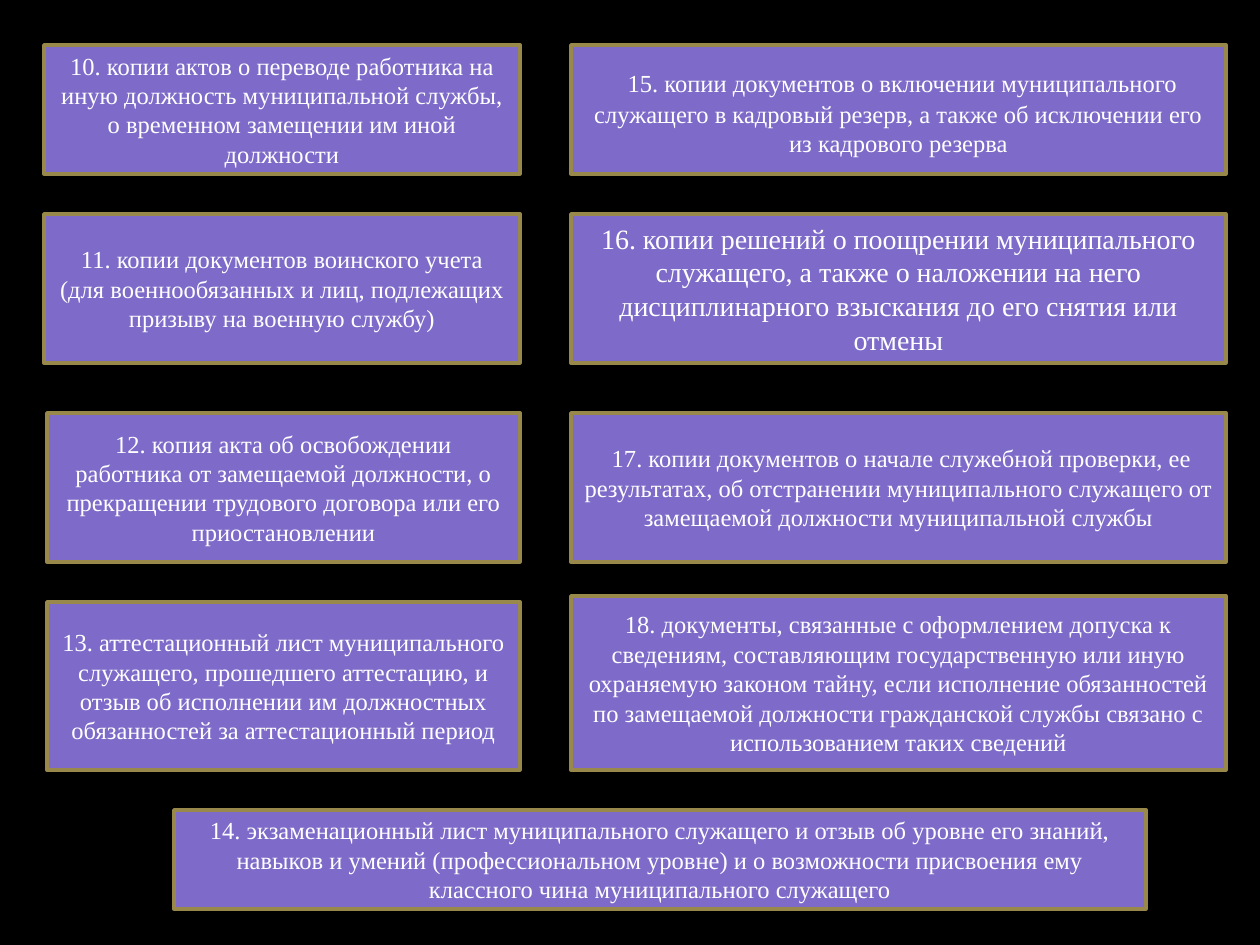
"""Build a slide of nine boxes listing documents kept in a municipal employee's personal file."""
from pptx import Presentation
from pptx.dml.color import RGBColor
from pptx.enum.shapes import MSO_SHAPE
from pptx.enum.text import MSO_ANCHOR, PP_ALIGN
from pptx.util import Pt

RECT = MSO_SHAPE.RECTANGLE
MIDDLE = MSO_ANCHOR.MIDDLE
CENTER = PP_ALIGN.CENTER

PX = 914400 // 126
WIDTH, HEIGHT = 1260, 945
FONT = "Times New Roman"
TEXT_SIZE = 14
COLORS = {"background": "000000", "box": "7E6BC9", "border": "98894B", "text": "FFFFFF"}

LEFT_EDGE, RIGHT_EDGE = 520, 1226
RIGHT_START = 571

LEFT_ITEMS = [
    (44, 45, 174, "10. копии актов о переводе работника на иную должность муниципальной службы, "
                  "о временном замещении им иной должности"),
    (44, 214, 363, "11. копии документов воинского учета (для военнообязанных и лиц, "
                   "подлежащих призыву на военную службу)"),
    (47, 413, 562, "12. копия акта об освобождении работника от замещаемой должности, "
                   "о прекращении трудового договора или его приостановлении"),
    (47, 602, 770, "13. аттестационный лист муниципального служащего, прошедшего аттестацию, "
                   "и отзыв об исполнении им должностных обязанностей за аттестационный период"),
]
RIGHT_ITEMS = [
    (45, 174, [(" ", 18),
               ("15. копии документов о включении муниципального служащего в кадровый резерв, "
                "а также об исключении его из кадрового резерва", TEXT_SIZE)]),
    (214, 363, [("16. копии решений о поощрении муниципального служащего, а также о наложении "
                 "на него дисциплинарного взыскания до его снятия или отмены", 16)]),
    (413, 562, [(" 17. копии документов о начале служебной проверки, ее результатах, "
                 "об отстранении муниципального служащего от замещаемой должности "
                 "муниципальной службы", TEXT_SIZE)]),
    (596, 770, [("18. документы, связанные с оформлением допуска к сведениям, составляющим "
                 "государственную или иную охраняемую законом тайну, если исполнение "
                 "обязанностей по замещаемой должности гражданской службы связано "
                 "с использованием таких сведений", TEXT_SIZE)]),
]
BOTTOM_ITEM = (174, 810, 1146, 909,
               "14. экзаменационный лист муниципального служащего и отзыв об уровне его знаний, "
               "навыков и умений (профессиональном уровне) и о возможности присвоения ему "
               "классного чина муниципального служащего")


def color(name):
    return RGBColor.from_string(COLORS[name])


def add_box(s, left, top, right, bottom, runs):
    sp = s.shapes.add_shape(RECT, left * PX, top * PX, (right - left) * PX, (bottom - top) * PX)
    sp.shadow.inherit = False
    sp.fill.solid()
    sp.fill.fore_color.rgb = color("box")
    sp.line.color.rgb = color("border")
    sp.line.width = Pt(2)
    tf = sp.text_frame
    tf.word_wrap = True
    tf.vertical_anchor = MIDDLE
    p = tf.paragraphs[0]
    p.alignment = CENTER
    p.font.name = FONT
    p.font.color.rgb = color("text")
    for text, size in runs:
        r = p.add_run()
        r.text = text
        r.font.size = Pt(size)


def main():
    prs = Presentation()
    prs.slide_width, prs.slide_height = WIDTH * PX, HEIGHT * PX
    s = prs.slides.add_slide(prs.slide_layouts[6])
    s.background.fill.solid()
    s.background.fill.fore_color.rgb = color("background")
    for left, top, bottom, text in LEFT_ITEMS:
        add_box(s, left, top, LEFT_EDGE, bottom, [(text, TEXT_SIZE)])
    for top, bottom, runs in RIGHT_ITEMS:
        add_box(s, RIGHT_START, top, RIGHT_EDGE, bottom, runs)
    *edges, text = BOTTOM_ITEM
    add_box(s, *edges, [(text, TEXT_SIZE)])
    prs.save("out.pptx")


if __name__ == "__main__":
    main()
